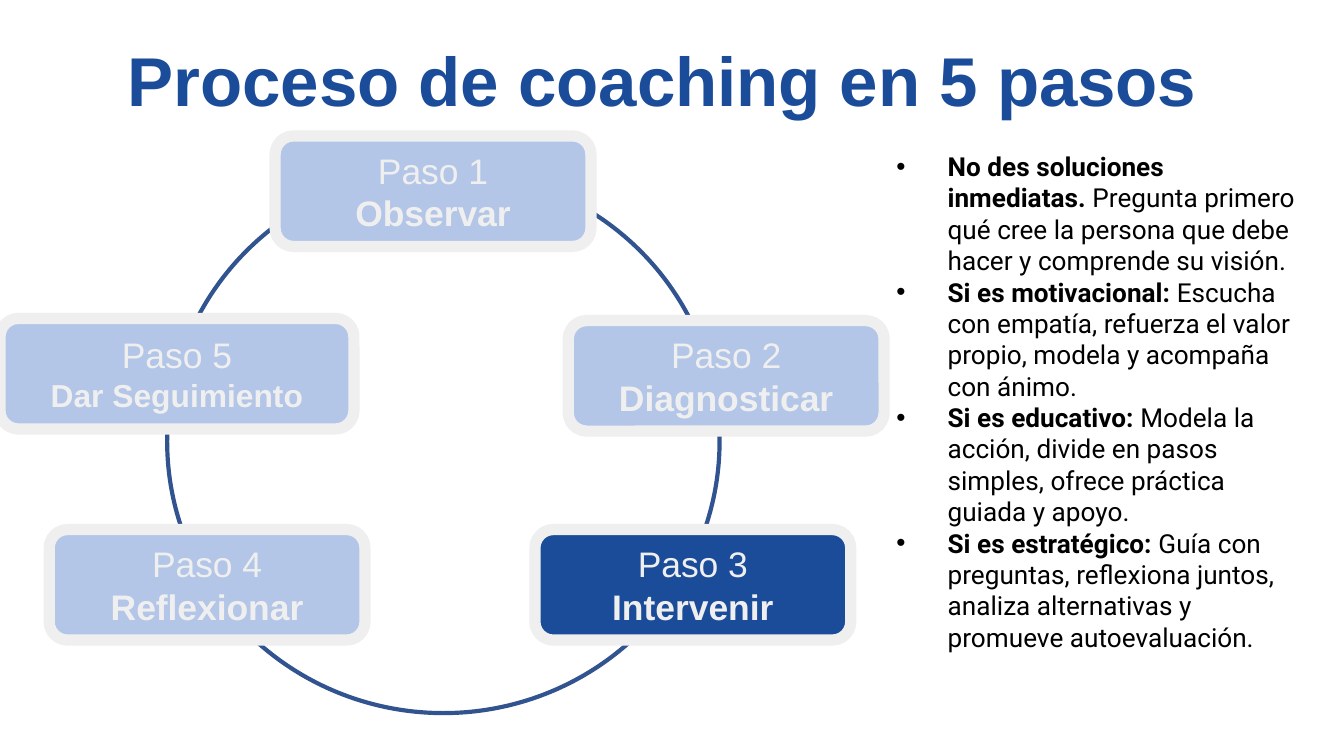
from lxml import etree
from pptx import Presentation
from pptx.dml.color import RGBColor
from pptx.enum import shapes, text
from pptx.oxml import ns
from pptx.util import Cm, Pt

BLUE = RGBColor(0x1A, 0x4C, 0x99)
PALE = RGBColor(0xB3, 0xC6, 0xE7)
RING = RGBColor(0x31, 0x53, 0x8F)
GREY = RGBColor(0xEF, 0xEF, 0xEF)
BLACK = RGBColor(0, 0, 0)

WIDE, HIGH = 5.97, 2.09
STEPS = [
    ("Observar", 5.2, 2.57, WIDE, PALE, 19),
    ("Diagnosticar", 10.74, 6.06, WIDE, PALE, 19),
    ("Intervenir", 10.11, 10.01, WIDE, BLUE, 19),
    ("Reflexionar", 0.93, 10.01, WIDE, PALE, 19),
    ("Dar Seguimiento", 0, 6.02, 6.69, PALE, 17),
]
TIPS = [
    ("No des soluciones inmediatas.",
     " Pregunta primero qué cree la persona que debe hacer y comprende su visión."),
    ("Si es motivacional:",
     " Escucha con empatía, refuerza el valor propio, modela y acompaña con ánimo."),
    ("Si es educativo:",
     " Modela la acción, divide en pasos simples, ofrece práctica guiada y apoyo."),
    ("Si es estratégico:",
     " Guía con preguntas, reflexiona juntos, analiza alternativas y promueve autoevaluación."),
]


def style(para, name, size, color, bold=False):
    font = para.font
    font.name, font.size, font.bold = name, Pt(size), bold
    font.color.rgb = color


def inset(frame):
    frame.margin_left = frame.margin_right = Cm(0.25)
    frame.margin_top = frame.margin_bottom = Cm(0.25)
    frame.word_wrap = True


def add_title(slide):
    title = slide.shapes.title
    title.left, title.top = Cm(1.59), Cm(0.64)
    title.width, title.height = Cm(22.22), Cm(1.93)
    frame = title.text_frame
    inset(frame)
    frame.auto_size = text.MSO_AUTO_SIZE.NONE
    frame.vertical_anchor = text.MSO_ANCHOR.TOP
    frame.text = "Proceso de coaching en 5 pasos "
    para = frame.paragraphs[0]
    para.alignment = text.PP_ALIGN.CENTER
    para.line_spacing = 0.9
    style(para, "Arial", 37, BLUE, True)


def add_ring(slide):
    ring = slide.shapes.add_shape(
        shapes.MSO_SHAPE.OVAL, Cm(3.16), Cm(3.21), Cm(10.44), Cm(10.27))
    ring.shadow.inherit = False
    ring.fill.background()
    ring.line.color.rgb = RING
    ring.line.width = Pt(2.25)


def add_step(slide, num, name, left, top, width, fill, size):
    box = slide.shapes.add_shape(
        shapes.MSO_SHAPE.ROUNDED_RECTANGLE, Cm(left), Cm(top), Cm(width), Cm(HIGH))
    box.shadow.inherit = False
    box.fill.solid()
    box.fill.fore_color.rgb = fill
    box.line.color.rgb = GREY
    box.line.width = Pt(6)
    frame = box.text_frame
    inset(frame)
    frame.vertical_anchor = text.MSO_ANCHOR.MIDDLE
    frame.text = f"Paso {num}\n{name}"
    head, label = frame.paragraphs
    head.alignment = label.alignment = text.PP_ALIGN.CENTER
    style(head, "Arial", 19, GREY)
    style(label, "Arial", size, GREY, True)


def add_bullet(para):
    props = para._p.get_or_add_pPr()
    props.set("marL", str(Cm(0.97)))
    props.set("indent", str(-Cm(0.97)))
    color = etree.SubElement(props, ns.qn("a:buClr"))
    etree.SubElement(color, ns.qn("a:srgbClr"), val=str(BLACK))
    etree.SubElement(props, ns.qn("a:buFont"), typeface="Arial")
    etree.SubElement(props, ns.qn("a:buChar"), char="•")
    tabs = etree.SubElement(props, ns.qn("a:tabLst"))
    etree.SubElement(tabs, ns.qn("a:tab"), pos=str(Cm(1.27)), algn="l")


def add_tips(slide):
    box = slide.shapes.add_textbox(Cm(16.69), Cm(2.72), Cm(8.1), Cm(9.25))
    frame = box.text_frame
    frame.word_wrap = True
    for num, (lead, rest) in enumerate(TIPS):
        para = frame.add_paragraph() if num else frame.paragraphs[0]
        add_bullet(para)
        style(para, "Roboto", 14, BLACK)
        for part, bold in ((lead, True), (rest, False)):
            run = para.add_run()
            run.text = part
            run.font.bold = bold


def main():
    deck = Presentation()
    deck.slide_width, deck.slide_height = Cm(25.4), Cm(14.29)
    slide = deck.slides.add_slide(deck.slide_layouts[5])
    add_ring(slide)
    for num, step in enumerate(STEPS, 1):
        add_step(slide, num, *step)
    add_title(slide)
    add_tips(slide)
    deck.save("out.pptx")


if __name__ == "__main__":
    main()
